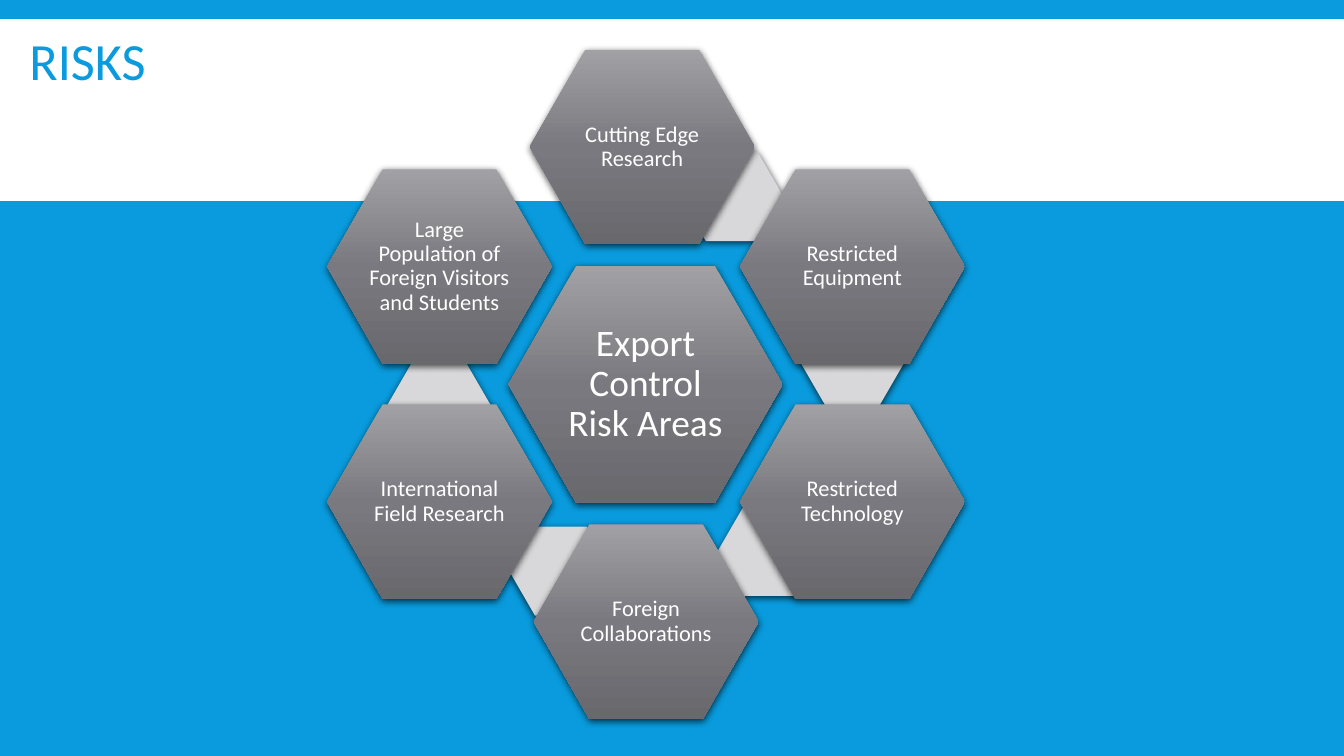
from lxml import etree
from pptx import Presentation
from pptx.dml.color import RGBColor
from pptx.enum.shapes import MSO_SHAPE
from pptx.enum.text import MSO_ANCHOR, PP_ALIGN
from pptx.oxml.ns import qn
from pptx.util import Pt

HEXAGON = MSO_SHAPE.HEXAGON
RECTANGLE = MSO_SHAPE.RECTANGLE
MIDDLE = MSO_ANCHOR.MIDDLE
CENTER = PP_ALIGN.CENTER
LEFT = PP_ALIGN.LEFT

COLORS = {
    "blue": "099BDD",
    "white": "FFFFFF",
    "link": "D8D8DA",
    "shadow": "000000",
    "gray_top": "A1A1A5",
    "gray_middle": "79797F",
    "gray_bottom": "68686D",
}
GRAY_STOPS = [(0, "gray_top"), (50, "gray_middle"), (100, "gray_bottom")]
FONT = "Calibri"

HUB_SIZE = (146.9, 126.7)
RISK_SIZE = (120.5, 104.2)
LINK_SIZE = (55.4, 47.7)
LEFT_X, RIGHT_X = 175.2, 396.4
UPPER_Y, LOWER_Y = 90.7, 216.7

RISKS = [
    ("Cutting Edge Research", (283.8, 26.6), (364.4, 81.5)),
    ("Restricted Equipment", (RIGHT_X, UPPER_Y), (429, 170.6)),
    ("Restricted Technology", (RIGHT_X, LOWER_Y), (384.4, 271.6)),
    ("Foreign Collaborations", (285.9, 281), (272.9, 282.2)),
    ("International Field Research", (LEFT_X, LOWER_Y), (207.5, 193.2)),
    ("Large Population of Foreign Visitors and Students", (LEFT_X, UPPER_Y), None),
]


def color(name):
    return RGBColor.from_string(COLORS[name])


def add_color(parent, name):
    return etree.SubElement(parent, qn("a:srgbClr"), val=COLORS[name])


def add_plain_shape(slide, kind, position, size):
    shape = slide.shapes.add_shape(kind, *(Pt(v) for v in position + size))
    shape.line.fill.background()
    shape.shadow.inherit = False
    return shape


def add_hexagon(slide, position, size, slant):
    hexagon = add_plain_shape(slide, HEXAGON, position, size)
    hexagon.adjustments[0] = slant
    effects = hexagon._element.spPr.find(qn("a:effectLst"))
    shadow = etree.SubElement(
        effects, qn("a:outerShdw"), blurRad=str(Pt(4)), dist=str(Pt(1.2)),
        dir="5400000", algn="ctr", rotWithShape="0")
    etree.SubElement(add_color(shadow, "shadow"), qn("a:alpha"), val="68000")
    return hexagon


def add_link(slide, position):
    link = add_hexagon(slide, position, LINK_SIZE, 0.289)
    link.fill.solid()
    link.fill.fore_color.rgb = color("link")


def fill_gray(hexagon):
    hexagon.fill.gradient()
    hexagon.fill.gradient_angle = 270
    stops = hexagon._element.spPr.find(qn("a:gradFill")).find(qn("a:gsLst"))
    for stop in list(stops):
        stops.remove(stop)
    for percent, name in GRAY_STOPS:
        stop = etree.SubElement(stops, qn("a:gs"), pos=str(percent * 1000))
        add_color(stop, name)


def add_label_hexagon(slide, label, position, size, font_size, inset):
    hexagon = add_hexagon(slide, position, size, 0.286)
    fill_gray(hexagon)
    frame = hexagon.text_frame
    frame.word_wrap = True
    frame.vertical_anchor = MIDDLE
    frame.margin_left = frame.margin_right = Pt(inset)
    frame.margin_top = frame.margin_bottom = Pt(inset)
    frame.text = label
    paragraph = frame.paragraphs[0]
    paragraph.alignment = CENTER
    paragraph.line_spacing = 0.9
    paragraph.space_after = Pt(0.35 * font_size)
    format_font(paragraph, font_size, "white")


def format_font(paragraph, font_size, color_name):
    paragraph.font.name = FONT
    paragraph.font.size = Pt(font_size)
    paragraph.font.color.rgb = color(color_name)


def add_band(slide):
    band = add_plain_shape(slide, RECTANGLE, (0, 10.3), (720, 97.3))
    band.fill.solid()
    band.fill.fore_color.rgb = color("white")


def set_title(slide, text):
    title = slide.shapes.title
    title.left, title.top, title.width, title.height = (
        Pt(v) for v in (8.6, 7.9, 555, 53.3))
    title.text_frame.text = text
    title.text_frame.vertical_anchor = MIDDLE
    paragraph = title.text_frame.paragraphs[0]
    paragraph.alignment = LEFT
    paragraph.line_spacing = 0.85
    format_font(paragraph, 28, "blue")
    slide.shapes._spTree.append(title._element)


def main():
    presentation = Presentation()
    presentation.slide_width, presentation.slide_height = Pt(720), Pt(405)
    slide = presentation.slides.add_slide(presentation.slide_layouts[5])
    slide.background.fill.solid()
    slide.background.fill.fore_color.rgb = color("blue")
    add_band(slide)
    add_label_hexagon(
        slide, "Export Control Risk Areas", (272.4, 142.6), HUB_SIZE, 20, 2)
    for label, position, link_position in RISKS:
        if link_position:
            add_link(slide, link_position)
        add_label_hexagon(slide, label, position, RISK_SIZE, 12, 1.2)
    set_title(slide, "RISKS")
    presentation.save("out.pptx")


if __name__ == "__main__":
    main()
